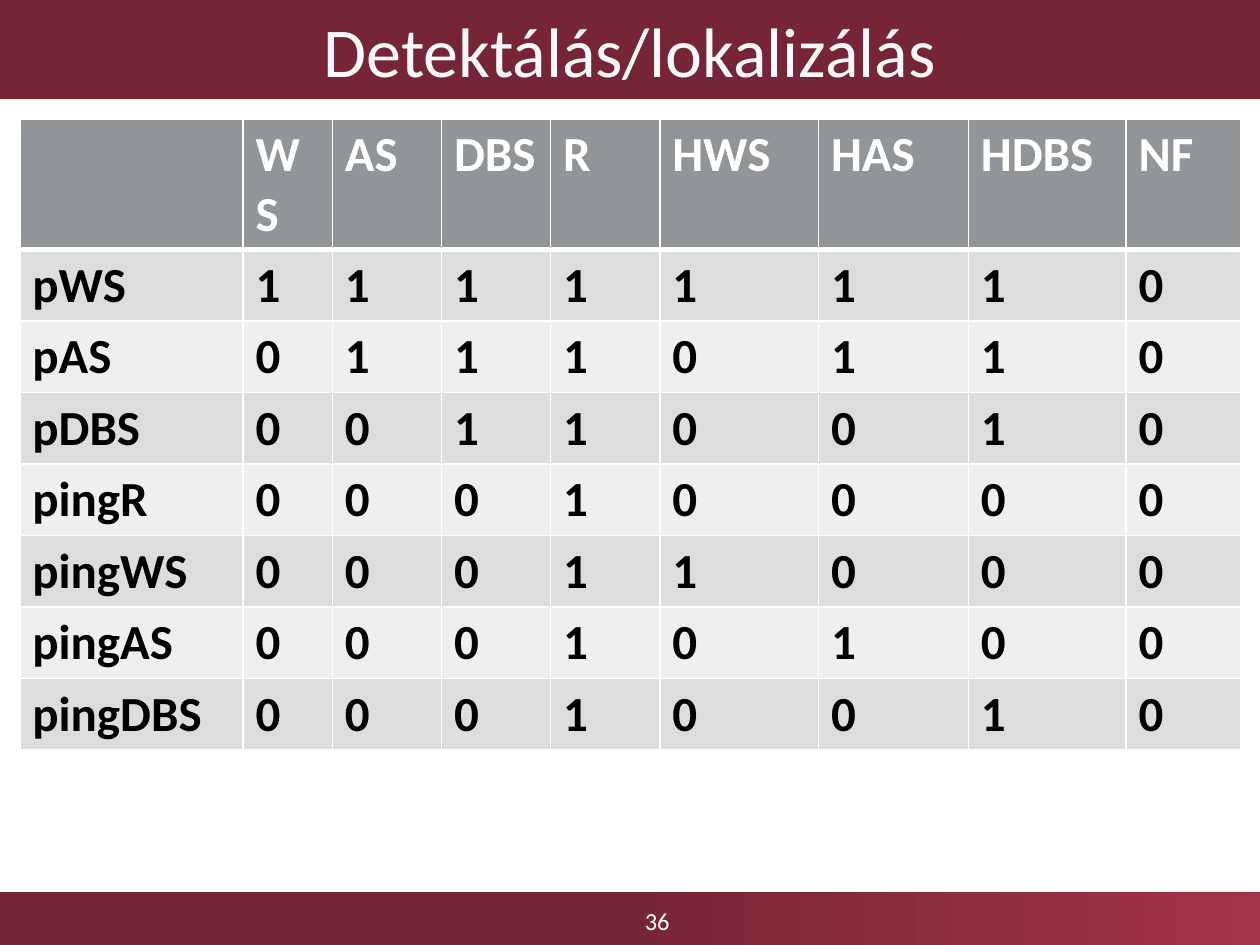
import copy

import pptx
import pptx.dml.color
import pptx.enum.shapes
import pptx.enum.text
import pptx.oxml
import pptx.oxml.ns
import pptx.util
from pptx.dml.color import RGBColor
from pptx.util import Cm

FONT = "Calibri"
BURGUNDY = RGBColor(0x76, 0x25, 0x36)
CRIMSON = RGBColor(0xA3, 0x33, 0x4B)
HEADER_GRAY = RGBColor(0x92, 0x95, 0x98)
BAND_COLORS = (RGBColor(0xDC, 0xDD, 0xDD), RGBColor(0xEE, 0xEF, 0xEF))
OFF_WHITE = RGBColor(0xF8, 0xF8, 0xF8)
WHITE = RGBColor(0xFF, 0xFF, 0xFF)
BLACK = RGBColor(0, 0, 0)

COLUMN_WIDTHS = (4.5, 1.8, 2.2, 2.2, 2.2, 3.2, 3.02, 3.18, 2.31)
FAULTS = ("", "WS", "AS", "DBS", "R", "HWS", "HAS", "HDBS", "NF")
DETECTIONS = {
    "pWS": "11111110",
    "pAS": "01110110",
    "pDBS": "00110010",
    "pingR": "00010000",
    "pingWS": "00011000",
    "pingAS": "00010100",
    "pingDBS": "00010010",
}


def write_text(text_frame, text, size, color, bold=False):
    """Fill a text frame and format its runs."""
    text_frame.text = text
    for run in text_frame.paragraphs[0].runs:
        run.font.name = FONT
        run.font.size = pptx.util.Pt(size)
        run.font.bold = bold
        run.font.color.rgb = color


def center_text(text_frame):
    """Center the text of a frame both ways."""
    text_frame.word_wrap = True
    text_frame.vertical_anchor = pptx.enum.text.MSO_ANCHOR.MIDDLE
    text_frame.paragraphs[0].alignment = pptx.enum.text.PP_ALIGN.CENTER


def add_bar(slide, left, top, width, height):
    """Add a burgundy rectangle without outline."""
    bar = slide.shapes.add_shape(
        pptx.enum.shapes.MSO_SHAPE.RECTANGLE, left, top, width, height
    )
    bar.shadow.inherit = False
    bar.fill.solid()
    bar.fill.fore_color.rgb = BURGUNDY
    bar.line.fill.background()
    return bar


def add_title(slide, left, top, width, height):
    """Add the title bar."""
    bar = add_bar(slide, left, top, width, height)
    write_text(bar.text_frame, "Detektálás/lokalizálás", 40, OFF_WHITE)
    center_text(bar.text_frame)


def add_footer(slide, left, top, width, height):
    """Add the gradient footer bar with the slide number."""
    bar = add_bar(slide, left, top, width, height)
    bar.fill.gradient()
    bar.fill.gradient_angle = 0
    first, last = bar.fill.gradient_stops
    first.color.rgb = BURGUNDY
    last.color.rgb = CRIMSON
    stop = bar.element.spPr.find(".//" + pptx.oxml.ns.qn("a:gs"))
    middle = copy.deepcopy(stop)
    middle.set("pos", "50000")
    stop.addnext(middle)

    number = slide.shapes.add_textbox(
        left + Cm(9.12), top + Cm(0.08), Cm(8.26), Cm(0.99)
    )
    write_text(number.text_frame, "36", 14, WHITE)
    center_text(number.text_frame)


def set_borders(cell, top, bottom):
    """Draw white cell borders with the given top and bottom widths in points."""
    properties = cell._tc.get_or_add_tcPr()
    for side, points in (("L", 1), ("R", 1), ("T", top), ("B", bottom)):
        properties.append(pptx.oxml.parse_xml(
            f'<a:ln{side} {pptx.oxml.ns.nsdecls("a")} w="{pptx.util.Pt(points)}">'
            f'<a:solidFill><a:srgbClr val="{WHITE}"/></a:solidFill></a:ln{side}>'
        ))


def add_detection_table(slide, left, top, width, height):
    """Add the table of checks against faults."""
    rows = [FAULTS] + [(check, *values) for check, values in DETECTIONS.items()]
    table = slide.shapes.add_table(
        len(rows), len(FAULTS), left, top, width, height
    ).table
    table.first_row = False
    table.horz_banding = False
    for column, column_width in zip(table.columns, COLUMN_WIDTHS):
        column.width = Cm(column_width)
    for row_index, texts in enumerate(rows):
        is_header = row_index == 0
        fill = HEADER_GRAY if is_header else BAND_COLORS[(row_index - 1) % 2]
        for column_index, text in enumerate(texts):
            cell = table.cell(row_index, column_index)
            set_borders(cell, 3 if row_index == 1 else 1, 3 if is_header else 1)
            cell.fill.solid()
            cell.fill.fore_color.rgb = fill
            write_text(cell.text_frame, text, 28, WHITE if is_header else BLACK, True)


def main():
    """Build and save the slide."""
    presentation = pptx.Presentation()
    presentation.slide_width = Cm(25.4)
    presentation.slide_height = Cm(19.05)
    slide = presentation.slides.add_slide(presentation.slide_layouts[6])
    add_footer(slide, Cm(0), Cm(17.98), Cm(25.4), Cm(1.07))
    add_title(slide, Cm(0), Cm(0), Cm(25.4), Cm(2))
    add_detection_table(slide, Cm(0.4), Cm(2.4), Cm(24.61), Cm(8.32))
    presentation.save("out.pptx")


if __name__ == "__main__":
    main()
